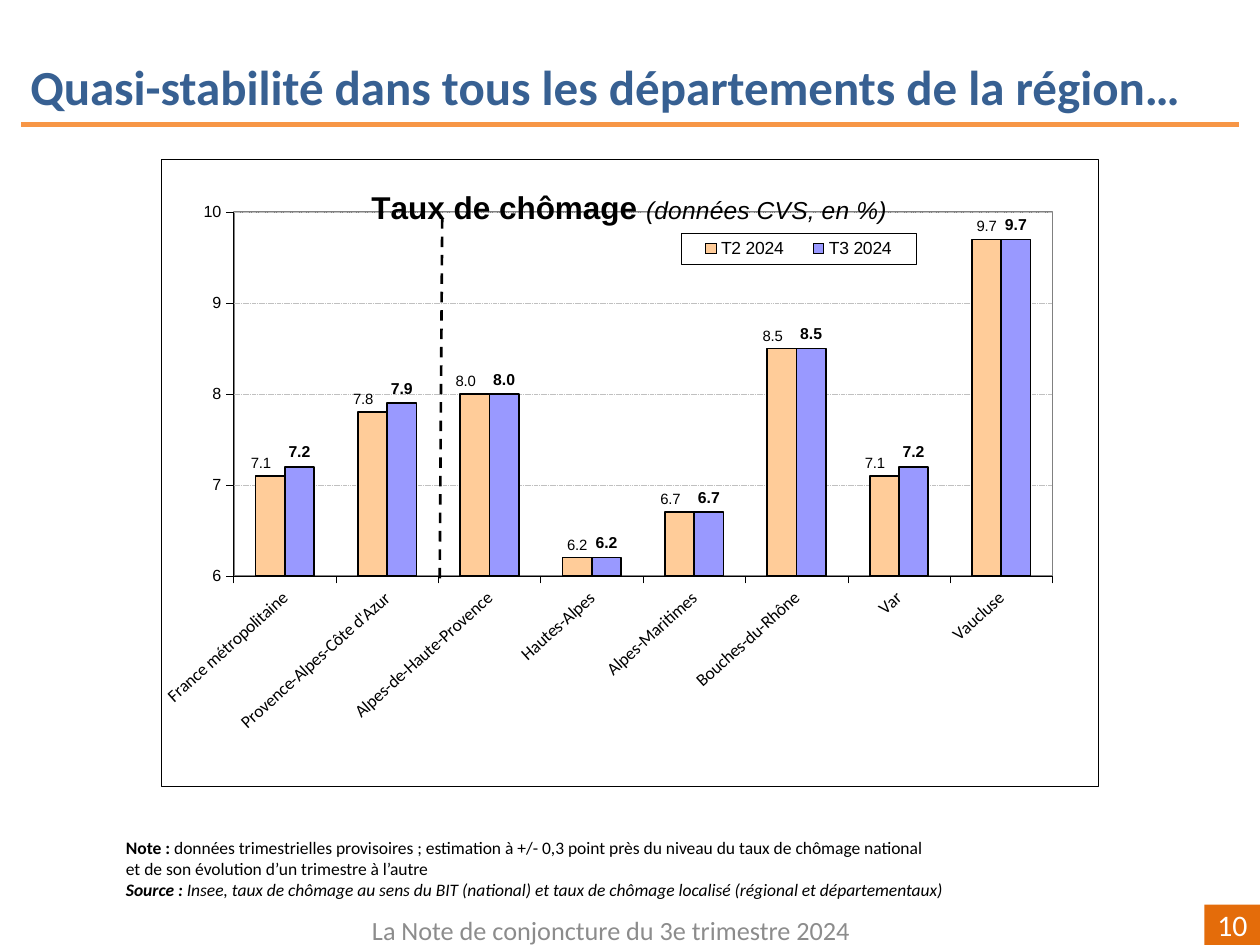
from lxml import etree
from pptx import Presentation
from pptx.chart.data import CategoryChartData
from pptx.dml.color import RGBColor
from pptx.enum.chart import XL_CHART_TYPE, XL_LABEL_POSITION, XL_TICK_MARK
from pptx.enum.dml import MSO_LINE
from pptx.enum.shapes import MSO_CONNECTOR, MSO_SHAPE
from pptx.enum.text import MSO_ANCHOR, PP_ALIGN
from pptx.oxml import parse_xml
from pptx.oxml.ns import nsdecls, qn
from pptx.util import Inches, Pt

COLUMNS = XL_CHART_TYPE.COLUMN_CLUSTERED
OUTSIDE_END = XL_LABEL_POSITION.OUTSIDE_END
TICK_OUT = XL_TICK_MARK.OUTSIDE
DASH, FINE_DASH = MSO_LINE.DASH, MSO_LINE.SQUARE_DOT
STRAIGHT, RECTANGLE = MSO_CONNECTOR.STRAIGHT, MSO_SHAPE.RECTANGLE
TOP, MIDDLE = MSO_ANCHOR.TOP, MSO_ANCHOR.MIDDLE
LEFT, CENTER, RIGHT = PP_ALIGN.LEFT, PP_ALIGN.CENTER, PP_ALIGN.RIGHT

BLACK, WHITE, YELLOW = "000000", "FFFFFF", "FFFF00"
DEPARTMENTS = ["France métropolitaine", "Provence-Alpes-Côte d'Azur",
               "Alpes-de-Haute-Provence", "Hautes-Alpes", "Alpes-Maritimes",
               "Bouches-du-Rhône", "Var", "Vaucluse"]
QUARTERS = [
    ("T2 2024", [7.1, 7.8, 8.0, 6.2, 6.7, 8.5, 7.1, 9.7], "FFCC99", 8.5, False),
    ("T3 2024", [7.2, 7.9, 8.0, 6.2, 6.7, 8.5, 7.2, 9.7], "9999FF", 9, True),
]
SHIFTED_LABELS = [0, 1, 2, 4, 5, 6]
HIGHLIGHTED_LABELS = [0, 1]
NOTES = [
    ("Note : ", "données trimestrielles provisoires ; estimation à +/- 0,3 point "
     "près du niveau du taux de chômage national", False),
    ("", "et de son évolution d’un trimestre à l’autre", False),
    ("Source : ", "Insee, taux de chômage au sens du BIT (national) et taux de "
     "chômage localisé (régional et départementaux)", True),
]


def rgb(value):
    """Turn a hex string into a colour."""
    return RGBColor.from_string(value)


def box(*lengths):
    """Convert lengths in inches."""
    return [Inches(length) for length in lengths]


def style(font, size, color=BLACK, name="Calibri", bold=False, italic=None):
    """Format a font."""
    font.size, font.name, font.bold, font.italic = Pt(size), name, bold, italic
    font.color.rgb = rgb(color)


def stroke(line, color, width, dash=None):
    """Format a line."""
    line.color.rgb, line.width = rgb(color), Pt(width)
    if dash:
        line.dash_style = dash


def write(frame, text, size, color, align=LEFT, anchor=MIDDLE, bold=False):
    """Fill a text frame with one formatted paragraph."""
    frame.word_wrap, frame.vertical_anchor = True, anchor
    paragraph = frame.paragraphs[0]
    paragraph.text, paragraph.alignment = text, align
    style(paragraph.font, size, color, bold=bold)


def add_line(slide, ends, color, width, dash=None):
    """Draw a straight line without shadow."""
    line = slide.shapes.add_connector(STRAIGHT, *box(*ends))
    stroke(line.line, color, width, dash)
    etree.SubElement(line._element.spPr, qn("a:effectLst"))


def add_notes(slide):
    """Write the note and the source under the chart."""
    frame = slide.shapes.add_textbox(*box(0.98, 6.61, 6.83, 0.53)).text_frame
    frame.word_wrap = True
    frame.margin_left, frame.margin_top, frame.margin_right, frame.margin_bottom = box(
        0.02, 0.03, 0, 0)
    for index, (lead, body, italic) in enumerate(NOTES):
        paragraph = frame.add_paragraph() if index else frame.paragraphs[0]
        style(paragraph.font, 10, bold=None, italic=italic)
        if lead:
            run = paragraph.add_run()
            run.text, run.font.bold = lead, True
        paragraph.add_run().text = body


def layout_xml(x, y, w=None, h=None, mode="edge", target=""):
    """Build a manual layout in shares of the chart."""
    parts = [f'<c:layoutTarget val="{target}"/>'] if target else []
    if mode == "edge":
        parts += ['<c:xMode val="edge"/><c:yMode val="edge"/>']
    parts += [f'<c:{key} val="{share}"/>'
              for key, share in zip("xywh", (x, y, w, h)) if share is not None]
    return parse_xml(f'<c:layout {nsdecls("c")}><c:manualLayout>{"".join(parts)}'
                     '</c:manualLayout></c:layout>')


def area_xml(fill, border=None, width=0.25):
    """Build the fill and border of a chart area."""
    line = (f'<a:ln w="{Pt(width)}"><a:solidFill><a:srgbClr val="{border}"/>'
            '</a:solidFill></a:ln>') if border else ""
    return parse_xml(f'<c:spPr {nsdecls("c", "a")}><a:solidFill>'
                     f'<a:srgbClr val="{fill}"/></a:solidFill>{line}</c:spPr>')


def place(element, layout):
    """Give a title or legend its manual layout."""
    for old in element.findall(qn("c:layout")):
        element.remove(old)
    element.find(qn("c:overlay")).addprevious(layout)


def format_title(chart):
    """Write the chart title over the plot."""
    title = chart.chart_title
    paragraph = title.text_frame.paragraphs[0]
    for text, size, bold in (("Taux de chômage ", 18, True),
                             ("(données CVS, en %)", 14, False)):
        run = paragraph.add_run()
        run.text = text
        style(run.font, size, name="Arial", bold=bold, italic=not bold)
    place(title._element, layout_xml(0.22, 0.04))
    title._element.find(qn("c:overlay")).set("val", "1")


def format_axes(chart):
    """Set scale, grid, ticks and fonts of both axes."""
    departments, rates = chart.category_axis, chart.value_axis
    for axis, size, name in ((departments, 10, "Calibri"), (rates, 9.2, "Arial")):
        axis.major_tick_mark = TICK_OUT
        stroke(axis.format.line, BLACK, 0.25)
        style(axis.tick_labels.font, size, name=name)
    departments._element.find(qn("c:txPr")).find(qn("a:bodyPr")).set(
        "rot", str(-42 * 60000))
    rates.minimum_scale, rates.maximum_scale, rates.major_unit = 6, 10, 1
    rates.tick_labels.number_format = "0"
    rates.tick_labels.number_format_is_linked = False
    stroke(rates.major_gridlines.format.line, "C0C0C0", 0.25, FINE_DASH)


def format_series(series, color, size, bold):
    """Colour the columns and label them with their values."""
    series.format.fill.solid()
    series.format.fill.fore_color.rgb = rgb(color)
    stroke(series.format.line, BLACK, 1)
    labels = series.data_labels
    labels.show_value, labels.position = True, OUTSIDE_END
    labels.number_format, labels.number_format_is_linked = "0.0", False
    style(labels.font, size, name="Arial", bold=bold)
    for index in HIGHLIGHTED_LABELS if bold else SHIFTED_LABELS:
        label = series.points[index].data_label
        label.position = OUTSIDE_END
        style(label.font, size, name="Arial", bold=bold)
    for label in labels._element.findall(qn("c:dLbl")):
        position = label.find(qn("c:idx"))
        if bold:
            position.addnext(area_xml(YELLOW))
        position.addnext(parse_xml(
            f'<c:numFmt {nsdecls("c")} formatCode="0.0" sourceLinked="0"/>'))
        if not bold:
            position.addnext(layout_xml(-0.01, 0, mode="factor"))


def add_rates_chart(slide):
    """Chart the unemployment rates by department."""
    data = CategoryChartData(number_format="0.0")
    data.categories = DEPARTMENTS
    for name, rates, *_ in QUARTERS:
        data.add_series(name, rates)
    chart = slide.shapes.add_chart(COLUMNS, *box(1.28, 1.26, 7.44, 4.98), data).chart
    style(chart.font, 8.5, name="Arial")
    chart._chartSpace.find(qn("c:txPr")).addprevious(area_xml(WHITE, BLACK))
    format_title(chart)
    format_axes(chart)
    plot = chart.plots[0]
    plot.gap_width, plot.overlap, plot.vary_by_categories = 150, 0, False
    for series, (_, _, color, size, bold) in zip(plot.series, QUARTERS):
        format_series(series, color, size, bold)
    chart.has_legend = True
    legend = chart.legend
    legend.include_in_layout = False
    style(legend.font, 10, name="Arial")
    place(legend._element, layout_xml(0.555, 0.118, 0.25, 0.05))
    legend._element.find(qn("c:txPr")).addprevious(area_xml(WHITE, BLACK))
    area = chart._chartSpace.chart.plotArea
    for old in area.findall(qn("c:layout")):
        area.remove(old)
    area.insert(0, layout_xml(0.077, 0.085, 0.874, 0.58, target="inner"))
    area.append(area_xml(WHITE, "808080", 1))


def add_footer(slide):
    """Add the publication name and the page number."""
    page = slide.shapes.add_shape(RECTANGLE, *box(9.56, 7.18, 0.44, 0.32))
    page.shadow.inherit = False
    page.fill.solid()
    page.fill.fore_color.rgb = rgb("E46C0A")
    page.line.fill.background()
    write(page.text_frame, "10", 17, WHITE, RIGHT)
    page.text_frame.word_wrap = False
    publication = slide.shapes.add_textbox(*box(2.41, 7.18, 4.88, 0.4))
    write(publication.text_frame, "La Note de conjoncture du 3e trimestre 2024",
          15, "8C8C8C", CENTER)


def main():
    """Build the slide and save it."""
    deck = Presentation()
    deck.slide_width, deck.slide_height = box(10, 7.5)
    slide = deck.slides.add_slide(deck.slide_layouts[5])
    heading = slide.shapes.title
    heading.left, heading.top, heading.width, heading.height = box(0.14, 0.4, 9.72, 0.57)
    write(heading.text_frame, "Quasi-stabilité dans tous les départements de la région…",
          28, "376092", anchor=TOP, bold=True)
    add_line(slide, (0.17, 0.99, 9.83, 0.99), "F79646", 3)
    add_footer(slide)
    add_notes(slide)
    add_rates_chart(slide)
    add_line(slide, (3.49, 4.59, 3.51, 1.7), BLACK, 1.5, DASH)
    deck.save("out.pptx")


if __name__ == "__main__":
    main()
